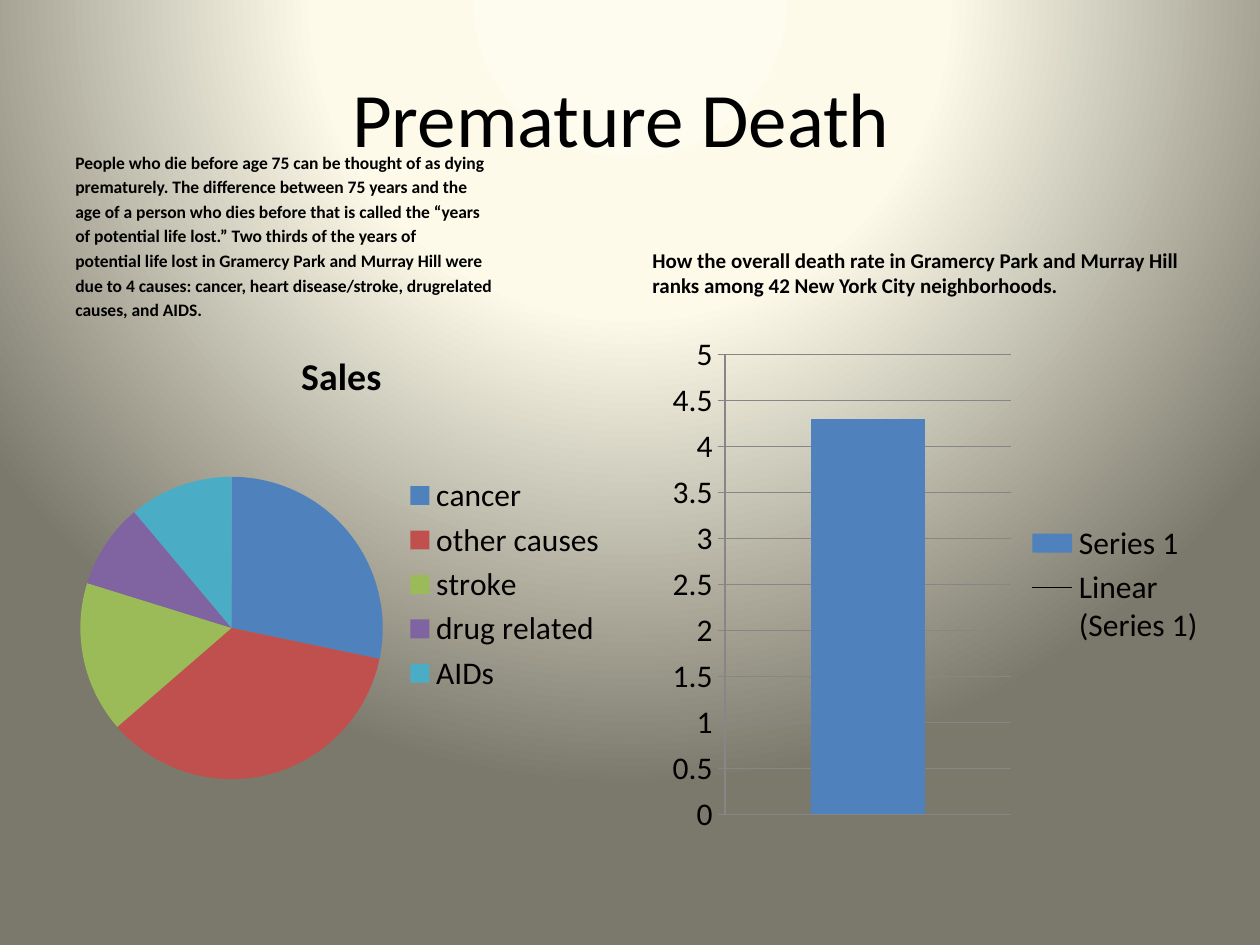
from dataclasses import dataclass

from lxml.etree import SubElement
from pptx import Presentation
from pptx.chart.chart import Chart
from pptx.chart.data import CategoryChartData
from pptx.dml.color import RGBColor
from pptx.enum.chart import XL_CHART_TYPE as ChartType
from pptx.enum.chart import XL_LEGEND_POSITION as LegendPosition
from pptx.enum.chart import XL_TICK_MARK as TickMark
from pptx.enum.text import MSO_ANCHOR as Anchor
from pptx.enum.text import PP_ALIGN as Align
from pptx.oxml import parse_xml
from pptx.oxml.ns import nsdecls, qn
from pptx.slide import Slide
from pptx.util import Inches, Pt

SLIDE_W, SLIDE_H = Inches(10), Inches(7.5)
FONT = "Calibri"
BLACK = RGBColor(0x00, 0x00, 0x00)
GRID_GRAY = RGBColor(0x86, 0x86, 0x86)
BLUE = RGBColor(0x4F, 0x81, 0xBD)
RED = RGBColor(0xC0, 0x50, 0x4D)
GREEN = RGBColor(0x9B, 0xBB, 0x59)
PURPLE = RGBColor(0x80, 0x64, 0xA2)
AQUA = RGBColor(0x4B, 0xAC, 0xC6)
CAUSE_COLORS = [BLUE, RED, GREEN, PURPLE, AQUA]
# Position in percent of the gradient, and its colour
BACKDROP = [
    (0, RGBColor(0xFE, 0xFC, 0xEE)),
    (40, RGBColor(0xFD, 0xFA, 0xEA)),
    (100, RGBColor(0x7B, 0x79, 0x6B)),
]


@dataclass(frozen=True)
class Area:
    """A rectangle in percent of the slide's width and height."""
    left: float
    top: float
    width: float
    height: float

    def box(self) -> tuple[int, int, int, int]:
        return (int(SLIDE_W * self.left / 100), int(SLIDE_H * self.top / 100),
                int(SLIDE_W * self.width / 100), int(SLIDE_H * self.height / 100))


@dataclass(frozen=True)
class TextBlock:
    area: Area
    lines: list[str]
    size: int
    bold: bool = True
    anchor: Anchor = Anchor.BOTTOM
    align: Align = Align.LEFT


@dataclass(frozen=True)
class ChartBlock:
    area: Area
    kind: ChartType
    series: str
    values: dict[str, float]


COLUMN_W, CHART_TOP, CHART_H = 44.2, 34.4, 54.9

TEXTS = [
    TextBlock(Area(5, 4, 90, 16.67), ["Premature Death "], 44, False,
              Anchor.MIDDLE, Align.CENTER),
    TextBlock(Area(5, 12.27, COLUMN_W, 22.27), [
        "People who die before age 75 can be thought of as dying",
        "prematurely. The difference between 75 years and the",
        "age of a person who dies before that is called the “years",
        "of potential life lost.” Two thirds of the years of",
        "potential life lost in Gramercy Park and Murray Hill were",
        "due to 4 causes: cancer, heart disease/stroke, drugrelated",
        "causes, and AIDS.",
    ], 10),
    TextBlock(Area(50.8, 17.73, COLUMN_W, 14.4), [
        "How the overall death rate in Gramercy Park and Murray Hill "
        "ranks among 42 New York City neighborhoods.",
    ], 12),
]
CAUSES = ChartBlock(
    Area(5, CHART_TOP, COLUMN_W, CHART_H), ChartType.PIE, "Sales",
    {"cancer": 28, "other causes": 35, "stroke": 16, "drug related": 9, "AIDs": 11})
DEATH_RATE = ChartBlock(
    Area(52.5, CHART_TOP, COLUMN_W, CHART_H), ChartType.COLUMN_CLUSTERED,
    "Series 1", {"1": 4.3})


def paint_background(slide: Slide) -> None:
    """Circular gradient centred above the top edge."""
    slide.background.fill.solid()
    solid = next(slide.element.iter(qn("a:solidFill")))
    stops = "".join(f'<a:gs pos="{at * 1000}"><a:srgbClr val="{color}"/></a:gs>'
                    for at, color in BACKDROP)
    solid.getparent().replace(solid, parse_xml(
        f'<a:gradFill {nsdecls("a")} rotWithShape="1"><a:gsLst>{stops}</a:gsLst>'
        '<a:path path="circle"><a:fillToRect l="50000" t="-80000" r="50000" '
        'b="180000"/></a:path></a:gradFill>'))


def style_font(font, size: float, bold: bool = False) -> None:
    font.name, font.size, font.bold = FONT, Pt(size), bold
    font.color.rgb = BLACK


def add_text(slide: Slide, block: TextBlock) -> None:
    frame = slide.shapes.add_textbox(*block.area.box()).text_frame
    frame.word_wrap = True
    frame.vertical_anchor = block.anchor
    for row, line in enumerate(block.lines):
        paragraph = frame.add_paragraph() if row else frame.paragraphs[0]
        paragraph.alignment = block.align
        if row:
            paragraph.space_before = Pt(block.size * 0.2)
        run = paragraph.add_run()
        run.text = line
        style_font(run.font, block.size, block.bold)


def add_chart(slide: Slide, block: ChartBlock) -> Chart:
    data = CategoryChartData()
    data.categories = list(block.values)
    data.add_series(block.series, list(block.values.values()))
    chart = slide.shapes.add_chart(block.kind, *block.area.box(), data).chart
    style_font(chart.font, 18)
    chart.has_title = False
    chart.has_legend = True
    chart.legend.position = LegendPosition.RIGHT
    chart.legend.include_in_layout = False
    return chart


def style_causes(chart: Chart) -> None:
    chart.has_title = True
    title = chart.chart_title.text_frame.paragraphs[0].add_run()
    title.text = CAUSES.series
    style_font(title.font, 21.6, True)
    plot = chart.plots[0]
    plot.vary_by_categories = True
    for index, color in enumerate(CAUSE_COLORS):
        fill = plot.series[0].points[index].format.fill
        fill.solid()
        fill.fore_color.rgb = color


def style_death_rate(chart: Chart) -> None:
    plot = chart.plots[0]
    plot.vary_by_categories = False
    plot.gap_width = 150
    series = plot.series[0]
    series.format.fill.solid()
    series.format.fill.fore_color.rgb = BLUE

    chart.category_axis.visible = False
    axis = chart.value_axis
    axis.minimum_scale, axis.maximum_scale, axis.major_unit = 0, 5, 0.5
    axis.major_tick_mark = TickMark.CROSS
    axis.has_major_gridlines = True
    for line in (axis.format.line, axis.major_gridlines.format.line):
        line.color.rgb = GRID_GRAY
        line.width = Pt(0.75)

    # Linear trend line, which the schema places ahead of the categories
    trend = parse_xml(
        f'<c:trendline {nsdecls("c", "a")}><c:spPr><a:ln w="9525"><a:solidFill>'
        f'<a:srgbClr val="{BLACK}"/></a:solidFill></a:ln></c:spPr></c:trendline>')
    for tag, value in (("trendlineType", "linear"), ("dispRSqr", "0"), ("dispEq", "0")):
        SubElement(trend, qn(f"c:{tag}")).set("val", value)
    next(chart.element.iter(qn("c:cat"))).addprevious(trend)


def main() -> None:
    deck = Presentation()
    deck.slide_width, deck.slide_height = SLIDE_W, SLIDE_H
    slide = deck.slides.add_slide(deck.slide_layouts[6])
    paint_background(slide)
    for block in TEXTS:
        add_text(slide, block)
    style_causes(add_chart(slide, CAUSES))
    style_death_rate(add_chart(slide, DEATH_RATE))
    deck.save("out.pptx")


if __name__ == "__main__":
    main()
